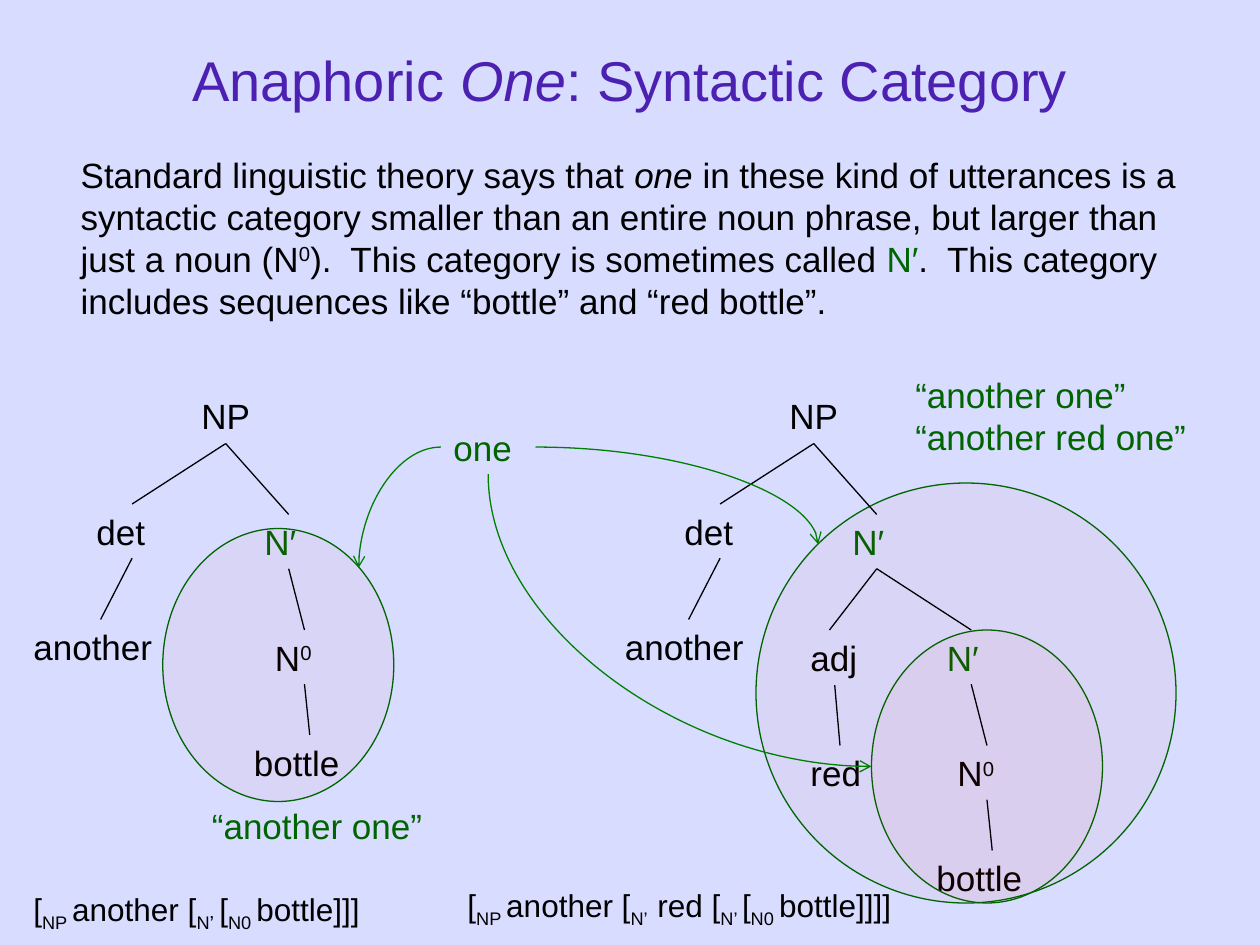
import pptx
import pptx.dml.color
import pptx.enum.shapes
import pptx.enum.text
import pptx.oxml
import pptx.oxml.ns
import pptx.util
from pptx.util import Pt

BLACK, GREEN, ARROW_GREEN, PURPLE = "000000", "006400", "008000", "4C21B1"
SUP, SUB = {"base": 30}, {"base": -25}


def rgb(value):
    return pptx.dml.color.RGBColor.from_string(value)


def add_text(x, y, w, h, paragraphs, color=BLACK, size=20, wrap=True, grow=True):
    """Each paragraph is a list of (text, style) runs."""
    tf = s.shapes.add_textbox(Pt(x), Pt(y), Pt(w), Pt(h)).text_frame
    tf.word_wrap = wrap
    if grow:
        tf.auto_size = pptx.enum.text.MSO_AUTO_SIZE.SHAPE_TO_FIT_TEXT
    for i, runs in enumerate(paragraphs):
        p = tf.add_paragraph() if i else tf.paragraphs[0]
        p.font.name, p.font.size = "Arial", Pt(size)
        p.font.color.rgb = rgb(color)
        for text, style in runs:
            r = p.add_run()
            r.text = text
            if "italic" in style:
                r.font.italic = True
            if "color" in style:
                r.font.color.rgb = rgb(style["color"])
            if "size" in style:
                r.font.size = Pt(style["size"])
            if "base" in style:
                r._r.get_or_add_rPr().set("baseline", str(style["base"] * 1000))
    return tf


prs = pptx.Presentation()
prs.slide_width, prs.slide_height = Pt(720), Pt(540)
s = prs.slides.add_slide(prs.slide_layouts[6])
s.background.fill.solid()
s.background.fill.fore_color.rgb = rgb("D8DCFF")

# Title
tf = add_text(54, 0, 612, 90, [[("Anaphoric ", {}), ("One", {"italic": True}),
              (": Syntactic Category", {})]], PURPLE, 32, grow=False)
tf.vertical_anchor = pptx.enum.text.MSO_ANCHOR.MIDDLE
tf.paragraphs[0].alignment = pptx.enum.text.PP_ALIGN.CENTER

# Explanation
tf = add_text(12, 84, 672, 444, [[
    ("Standard linguistic theory says that ", {}), ("one", {"italic": True}),
    (" in these kind of utterances is a syntactic category smaller than an entire "
     "noun phrase, but larger than just a noun (N", {}), ("0", SUP),
    (").  This category is sometimes called ", {}), ("N′", {"color": GREEN}),
    (".  This category includes sequences like “bottle” and “red bottle”.", {}),
]], grow=False)
tf.paragraphs[0].space_before = Pt(4)
tf.paragraphs[0]._p.get_or_add_pPr().set("marL", str(Pt(27)))

# Tree parts: labels are (x, y, width, text, colour), branches (x1, y1, x2, y2)
labels = [(12, 354, 91, "another", BLACK), (350, 354, 89, "another", BLACK),
          (480, 294, 42, "N′", GREEN), (456, 360, 42, "adj", BLACK),
          (456, 426, 48, "red", BLACK), (252, 240, 54, "one", GREEN),
          (114, 456, 186, "“another one”", GREEN)]
branches = [(501, 325, 474, 360), (501, 325, 555, 360), (477, 391.5, 480, 426)]

# Upper half of each tree
for dx in (0, 336):
    labels += [(108 + dx, 222, 42.5, "NP", BLACK), (48 + dx, 288, 55, "det", BLACK)]
    branches += [(129 + dx, 253.5, 75.5 + dx, 288),
                 (129 + dx, 253.5, 165 + dx, 294),
                 (75.5 + dx, 319, 57.5 + dx, 354)]

# Noun chain N′ - N0 - bottle of each tree
for dx, dy in ((0, 0), (390, 66)):
    labels += [(144 + dx, 294 + dy, 42, "N′", GREEN),
               (138 + dx, 420 + dy, 78, "bottle", BLACK)]
    branches += [(165 + dx, 325 + dy, 174 + dx, 360 + dy),
                 (174 + dx, 391 + dy, 177 + dx, 420 + dy)]
    add_text(150 + dx, 360 + dy, 48, 31, [[("N", {}), ("0", SUP)]])

for x, y, w, text, color in labels:
    add_text(x, y, w, 31, [[(text, {})]], color, wrap=text != "NP")
add_text(516, 210, 186, 55.5,
         [[("“another one”", {})], [("“another red one”", {})]], GREEN)

# Bracket notation
add_text(12, 503, 208, 29, [[
    ("[", {}), ("NP ", SUB), ("another [", {}), ("N", SUB),
    ("’", {"base": -25, "size": 20}), (" ", SUB), ("[", {}), ("N0 ", SUB),
    ("bottle]]]", {})]], size=18, wrap=False)
add_text(260, 503, 265, 29, [[
    ("[", {}), ("NP ", SUB), ("another [", {}), ("N’  ", SUB), ("red [", {}),
    ("N’ ", SUB), ("[", {}), ("N0 ", SUB), ("bottle]]]]", {})]], size=18, wrap=False)

# Translucent ellipses around the antecedents
for x, y, w, h in ((93, 302, 132, 156), (498, 360, 132, 156), (432, 276, 240, 240)):
    sp = s.shapes.add_shape(pptx.enum.shapes.MSO_SHAPE.OVAL, Pt(x), Pt(y), Pt(w), Pt(h))
    sp.shadow.inherit = False
    sp.fill.solid()
    sp.fill.fore_color.rgb = rgb("FF0000")
    clr = sp._element.spPr.find(".//" + pptx.oxml.ns.qn("a:srgbClr"))
    clr.append(pptx.oxml.parse_xml(
        '<a:alpha %s val="3000"/>' % pptx.oxml.ns.nsdecls("a")))
    sp.line.color.rgb = rgb(GREEN)
    sp.line.width = Pt(0.75)

# Tree branches and curved arrows from "one"; the last value is the rotation
arrows = [(252, 255.5, 205, 324.5, 0), (472, 245, 305, 464, 270),
          (306, 255.5, 467.5, 311, 0)]
kinds = pptx.enum.shapes.MSO_CONNECTOR
for x1, y1, x2, y2, *rotation in branches + arrows:
    kind = kinds.CURVE if rotation else kinds.STRAIGHT
    c = s.shapes.add_connector(kind, Pt(x1), Pt(y1), Pt(x2), Pt(y2))
    c.line.color.rgb = rgb(ARROW_GREEN if rotation else BLACK)
    c.line.width = Pt(0.75)
    spPr = c._element.spPr
    if rotation:
        spPr.find(pptx.oxml.ns.qn("a:prstGeom")).set("prst", "curvedConnector2")
        spPr.find(pptx.oxml.ns.qn("a:xfrm")).set("rot", str(rotation[0] * 60000))
        c.line._get_or_add_ln().append(pptx.oxml.parse_xml(
            '<a:tailEnd %s type="arrow"/>' % pptx.oxml.ns.nsdecls("a")))
    spPr.append(pptx.oxml.parse_xml('<a:effectLst %s/>' % pptx.oxml.ns.nsdecls("a")))

prs.save("out.pptx")
